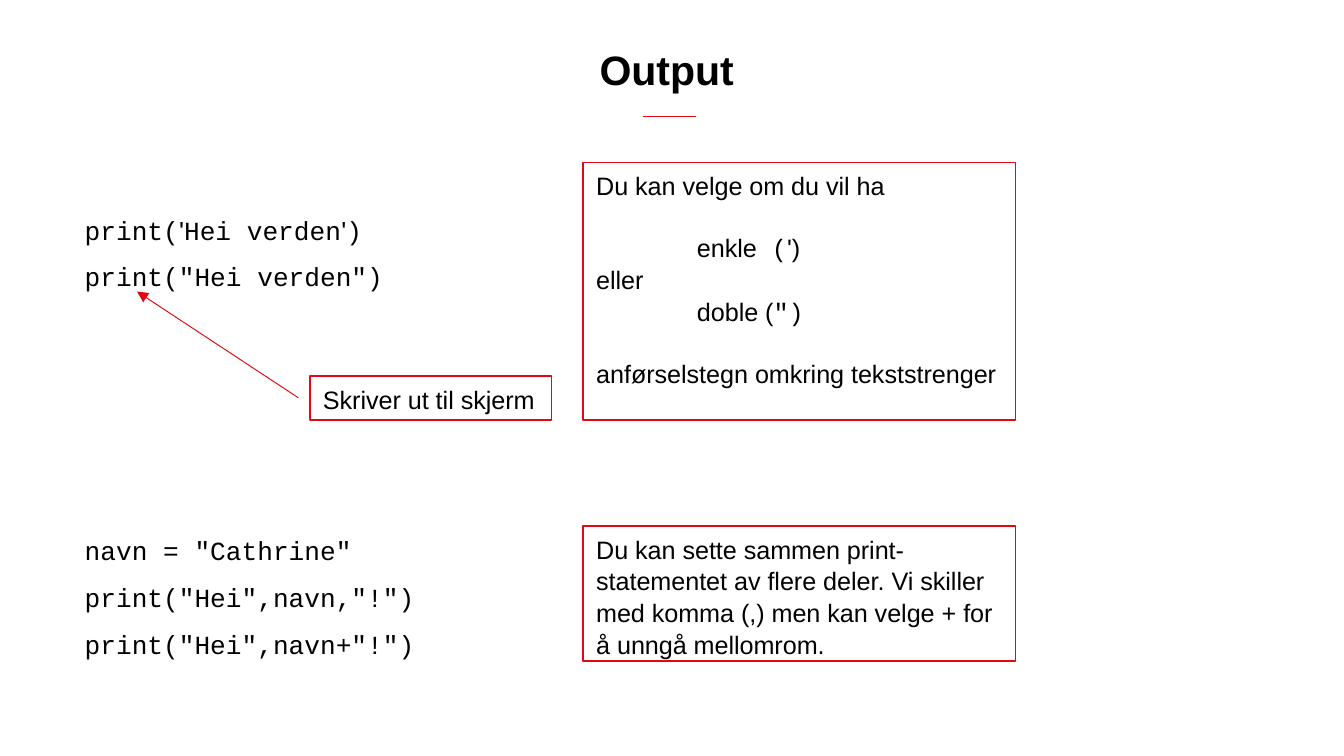
from dataclasses import dataclass

from lxml.etree import SubElement
from pptx import Presentation
from pptx.dml.color import RGBColor as Color
from pptx.enum.shapes import MSO_CONNECTOR as Connector, MSO_SHAPE as Shape
from pptx.enum.text import MSO_ANCHOR as Anchor, PP_ALIGN as Align
from pptx.oxml.ns import qn
from pptx.util import Pt


@dataclass(frozen=True)
class Theme:
    text: Color = Color(0x00, 0x00, 0x00)
    accent: Color = Color(0xE3, 0x06, 0x13)
    paper: Color = Color(0xFF, 0xFF, 0xFF)
    sans: str = "Arial"
    mono: str = "Courier New"
    title_size: float = 22
    code_size: float = 14
    note_size: float = 13.5
    line_spacing: float = 1.05
    code_gap: float = 7.5
    note_gap: float = 16.3
    indent: float = 54


def apply(target, values):
    for name, value in values.items():
        setattr(target, name, value)


class SlideBuilder:
    """Draws the styled elements of one slide."""

    def __init__(self, slide, theme):
        self.slide = slide
        self.theme = theme

    def add_runs(self, paragraph, runs, size, bold=False, **layout):
        apply(paragraph, layout)
        for text, font_name in runs:
            run = paragraph.add_run()
            run.text = text
            apply(run.font, {"name": font_name, "size": Pt(size), "bold": bold})
            run.font.color.rgb = self.theme.text

    def paragraphs(self, frame, count):
        return [frame.paragraphs[0]] + [frame.add_paragraph() for _ in range(count - 1)]

    def text_box(self, left, top, width, height, anchor):
        box = self.slide.shapes.add_textbox(Pt(left), Pt(top), Pt(width), Pt(height))
        apply(box.text_frame, {
            "word_wrap": True, "vertical_anchor": anchor,
            "margin_left": 0, "margin_right": 0, "margin_top": 0, "margin_bottom": 0,
        })
        return box.text_frame

    def title(self, text, left, top, width, height):
        frame = self.text_box(left, top, width, height, Anchor.MIDDLE)
        self.add_runs(frame.paragraphs[0], [(text, self.theme.sans)],
                      self.theme.title_size, bold=True, alignment=Align.CENTER)

    def code(self, lines, left, top, width, height):
        frame = self.text_box(left, top, width, height, Anchor.TOP)
        for index, (paragraph, runs) in enumerate(zip(self.paragraphs(frame, len(lines)), lines)):
            self.add_runs(paragraph, runs, self.theme.code_size,
                          line_spacing=self.theme.line_spacing,
                          space_before=Pt(self.theme.code_gap if index else 0))

    def note(self, lines, left, top, width, height):
        shape = self.slide.shapes.add_shape(
            Shape.RECTANGLE, Pt(left), Pt(top), Pt(width), Pt(height))
        shape.shadow.inherit = False
        shape.fill.solid()
        shape.fill.fore_color.rgb = self.theme.paper
        shape.line.color.rgb = self.theme.accent
        shape.line.width = Pt(1)
        apply(shape.text_frame, {"word_wrap": True, "vertical_anchor": Anchor.TOP})
        for paragraph, (runs, gap, indent) in zip(
                self.paragraphs(shape.text_frame, len(lines)), lines):
            self.add_runs(paragraph, runs, self.theme.note_size, alignment=Align.LEFT,
                          line_spacing=self.theme.line_spacing, space_before=Pt(gap))
            if indent:
                paragraph._p.get_or_add_pPr().set("marL", str(Pt(indent)))

    def line(self, start, end, width, arrow=False):
        connector = self.slide.shapes.add_connector(
            Connector.STRAIGHT, *(Pt(value) for value in (*start, *end)))
        connector.line.color.rgb = self.theme.accent
        connector.line.width = Pt(width)
        if arrow:
            SubElement(connector.line._get_or_add_ln(), qn("a:tailEnd"), type="triangle")
        SubElement(connector._element.spPr, qn("a:effectLst"))


def main():
    presentation = Presentation()
    apply(presentation, {"slide_width": Pt(720), "slide_height": Pt(405)})
    theme = Theme()
    sans, mono, gap, indent = theme.sans, theme.mono, theme.note_gap, theme.indent
    builder = SlideBuilder(
        presentation.slides.add_slide(presentation.slide_layouts[6]), theme)

    builder.line((344.5, 62.4), (373, 62.4), 1)
    builder.title("Output", 45.4, 23, 623.5, 28)
    builder.code([
        [("print(", mono), ("'", sans), ("Hei verden", mono), ("'", sans), (")", mono)],
        [('print("Hei verden")', mono)],
    ], 45.4, 113.8, 260, 45)
    builder.code([
        [('navn = "Cathrine"', mono)],
        [('print("Hei",navn,"!")', mono)],
        [('print("Hei",navn+"!")', mono)],
    ], 45.4, 285.3, 260, 70)

    builder.line((159.8, 213.1), (73.4, 156.2), 0.5, arrow=True)
    builder.note([([("Skriver ut til skjerm", sans)], 0, 0)], 165.9, 201.6, 129.6, 23.6)
    builder.note([
        ([("Du kan velge om du vil ha", sans)], 0, 0),
        ([("enkle", sans), (" (", mono), ("')", sans)], gap, indent),
        ([("eller", sans)], 0, 0),
        ([("doble (", sans), ('")', mono)], 0, indent),
        ([("anførselstegn omkring tekststrenger", sans)], gap, 0),
    ], 312.3, 87.1, 231.8, 138.1)
    builder.note([
        ([("Du kan sette sammen print-statementet av flere deler. Vi skiller "
           "med komma (,) men kan velge + for å unngå mellomrom.", sans)], 0, 0),
    ], 312.3, 281.7, 231.8, 72.5)
    presentation.save("out.pptx")


if __name__ == "__main__":
    main()
